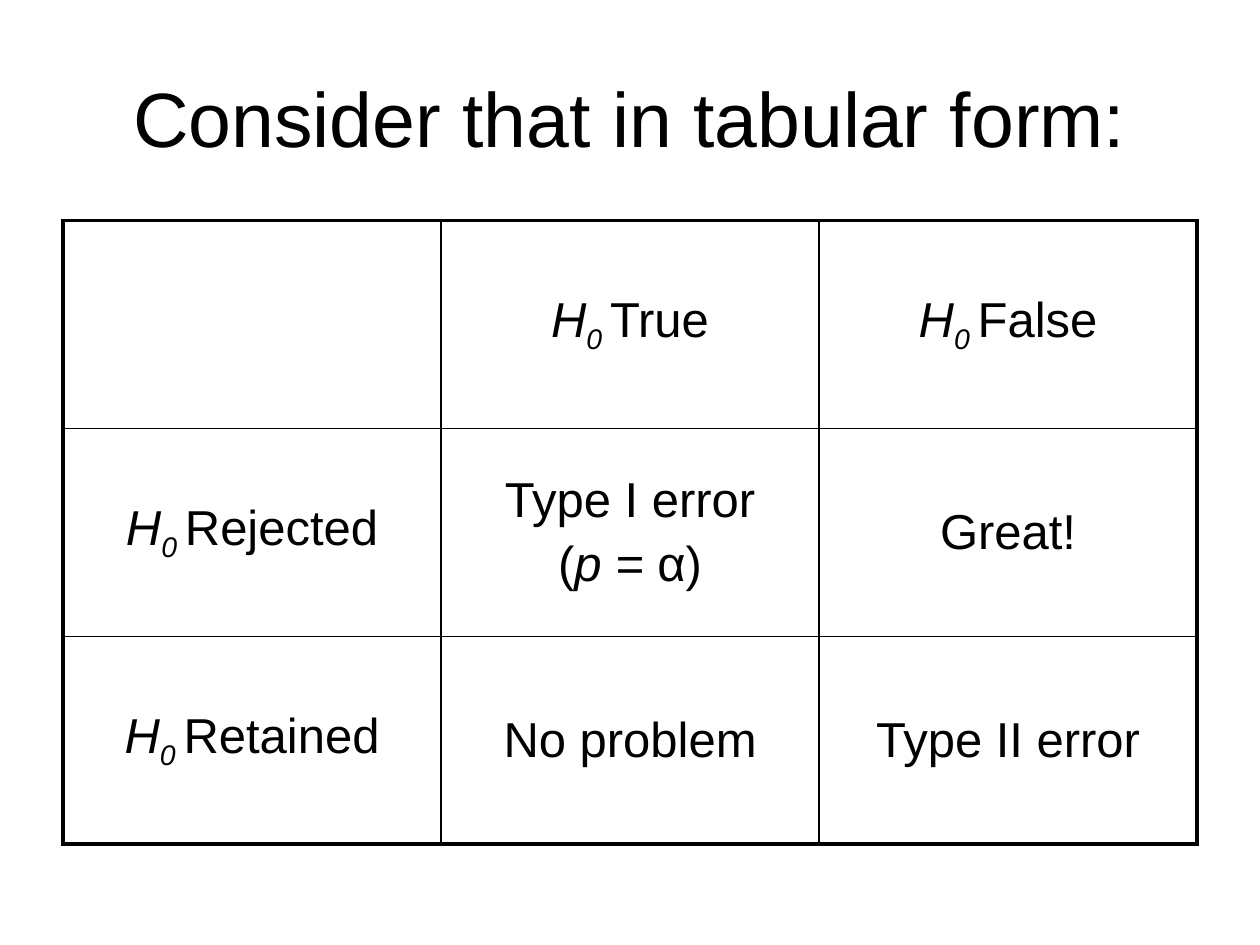
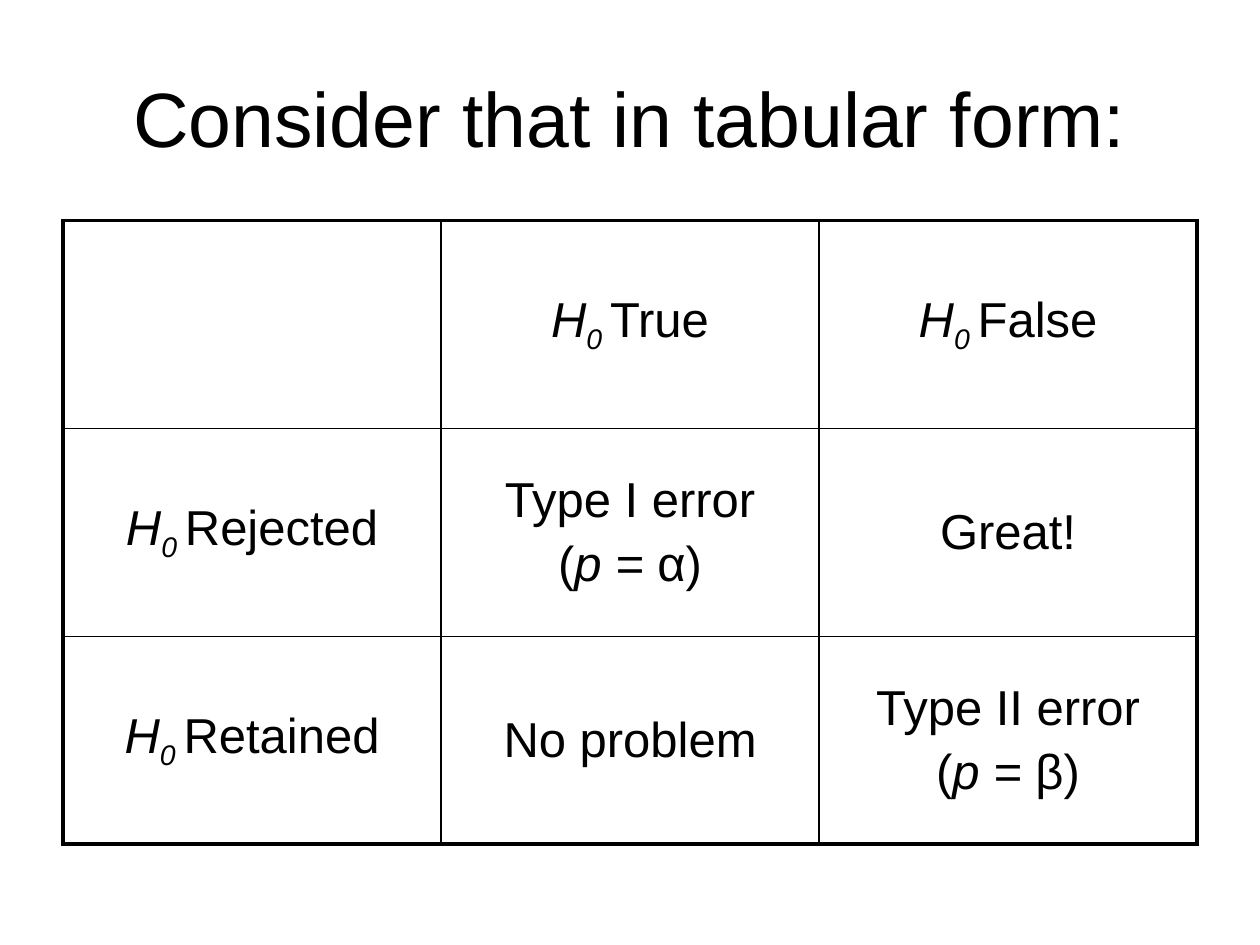
from dataclasses import dataclass

from lxml import etree
from pptx import Presentation
from pptx.dml.color import RGBColor
from pptx.enum.text import MSO_ANCHOR, PP_ALIGN
from pptx.oxml.ns import qn
from pptx.util import Pt

CENTER = PP_ALIGN.CENTER
MIDDLE = MSO_ANCHOR.MIDDLE
TITLE_ONLY = 5


@dataclass(frozen=True)
class Theme:
    font: str = "Arial"
    ink: str = "000000"
    title_size: float = 44
    cell_size: float = 28
    space_before_percent: int = 20
    subscript_percent: int = -25
    outer_line: float = 2.25
    inner_line: float = 1


@dataclass(frozen=True)
class Span:
    text: str
    italic: bool = False
    subscript: bool = False


class Deck:
    def __init__(self, theme):
        self.theme = theme
        self.presentation = Presentation()
        self.presentation.slide_width = Pt(720)
        self.presentation.slide_height = Pt(540)
        self.page = None

    def add_page(self, title):
        layout = self.presentation.slide_layouts[TITLE_ONLY]
        self.page = self.presentation.slides.add_slide(layout)
        box = self.page.shapes.title
        box.left, box.top, box.width, box.height = Pt(36), Pt(21.6), Pt(648), Pt(90)
        frame = box.text_frame
        frame.text = title
        frame.vertical_anchor = MIDDLE
        para = frame.paragraphs[0]
        para.alignment = CENTER
        self.style_font(para.runs[0].font, self.theme.title_size)

    def add_table(self, rows, left, top, width, height):
        row_count, column_count = len(rows), len(rows[0])
        table = self.page.shapes.add_table(
            row_count, column_count, Pt(left), Pt(top), Pt(width), Pt(height)
        ).table
        table.first_row = False
        table.horz_banding = False
        for row_index, row in enumerate(rows):
            for column_index, lines in enumerate(row):
                cell = table.cell(row_index, column_index)
                outer_edges = {
                    "a:lnL": column_index == 0,
                    "a:lnR": column_index == column_count - 1,
                    "a:lnT": row_index == 0,
                    "a:lnB": row_index == row_count - 1,
                }
                self.add_borders(cell, outer_edges)
                cell.fill.background()
                cell.vertical_anchor = MIDDLE
                self.fill_cell(cell, lines)

    def add_borders(self, cell, outer_edges):
        properties = cell._tc.get_or_add_tcPr()
        for edge, is_outer in outer_edges.items():
            width = self.theme.outer_line if is_outer else self.theme.inner_line
            line = etree.SubElement(properties, qn(edge), w=str(Pt(width)))
            fill = etree.SubElement(line, qn("a:solidFill"))
            etree.SubElement(fill, qn("a:srgbClr"), val=self.theme.ink)

    def fill_cell(self, cell, lines):
        frame = cell.text_frame
        for index, spans in enumerate(lines):
            para = frame.add_paragraph() if index else frame.paragraphs[0]
            para.alignment = CENTER
            self.space_before(para)
            for span in spans:
                run = para.add_run()
                run.text = span.text
                self.style_font(run.font, self.theme.cell_size)
                run.font.italic = span.italic
                if span.subscript:
                    baseline = self.theme.subscript_percent * 1000
                    run.font._element.set("baseline", str(baseline))

    def space_before(self, para):
        properties = para._p.get_or_add_pPr()
        spacing = etree.SubElement(properties, qn("a:spcBef"))
        percent = self.theme.space_before_percent * 1000
        etree.SubElement(spacing, qn("a:spcPct"), val=str(percent))

    def style_font(self, font, size):
        font.name = self.theme.font
        font.size = Pt(size)
        font.color.rgb = RGBColor.from_string(self.theme.ink)


def hypothesis(state):
    return [[Span("H", italic=True), Span("0 ", italic=True, subscript=True), Span(state)]]


def outcome(name, probability=None):
    lines = [[Span(name)]]
    if probability:
        lines.append([Span("("), Span("p = ", italic=True), Span(f"{probability})")])
    return lines


def main():
    deck = Deck(Theme())
    for type_two_probability in (None, "β"):
        deck.add_page("Consider that in tabular form:")
        decision_rows = [
            [[], hypothesis("True"), hypothesis("False")],
            [hypothesis("Rejected"), outcome("Type I error", "α"), outcome("Great!")],
            [
                hypothesis("Retained"),
                outcome("No problem"),
                outcome("Type II error", type_two_probability),
            ],
        ]
        deck.add_table(decision_rows, left=36, top=126, width=648, height=356.4)
    deck.presentation.save("out.pptx")


if __name__ == "__main__":
    main()
